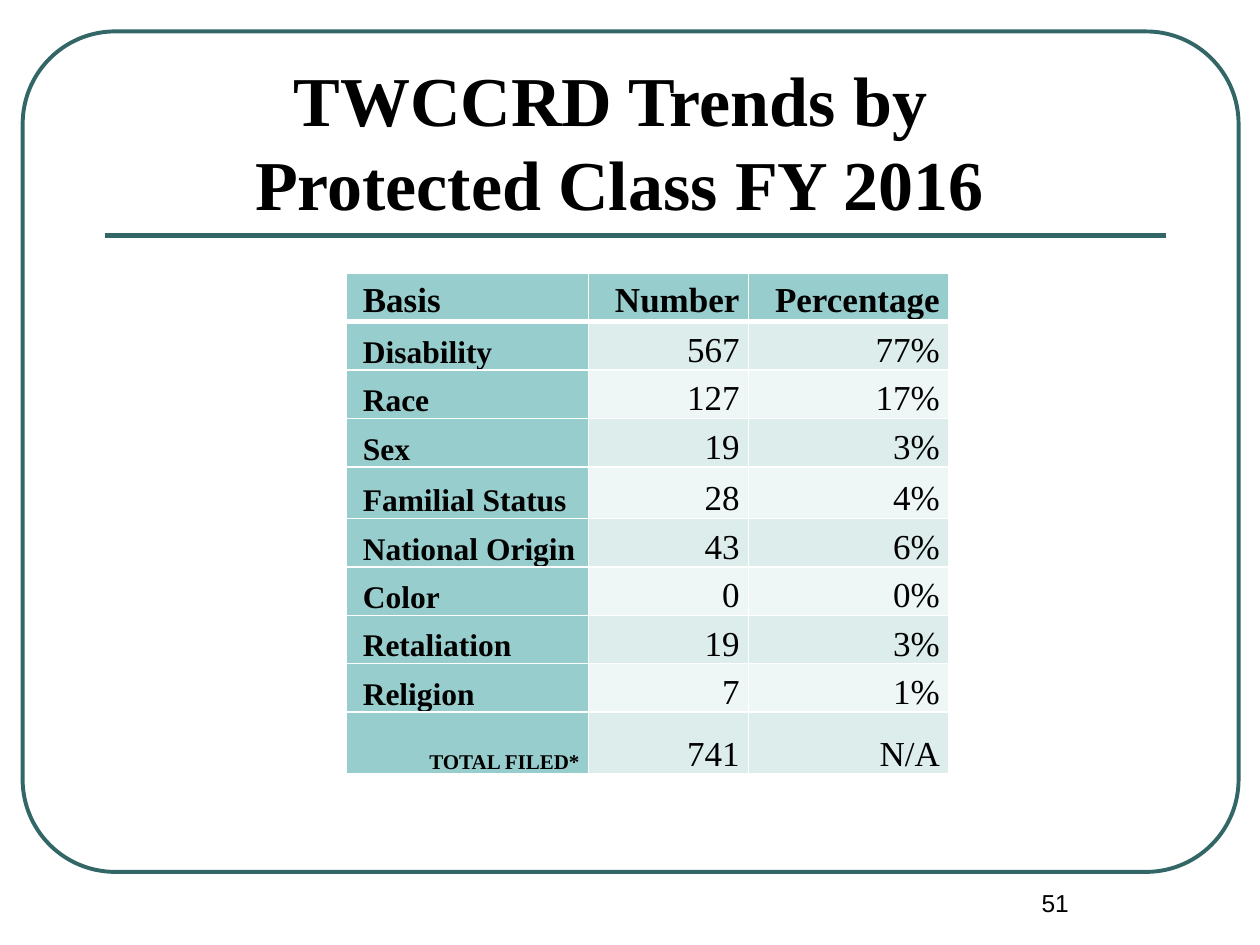
from pptx import Presentation
from pptx.dml.color import RGBColor
from pptx.enum.shapes import MSO_CONNECTOR, MSO_SHAPE
from pptx.enum.text import MSO_ANCHOR, PP_ALIGN
from pptx.oxml.ns import qn
from pptx.util import Inches, Pt
from lxml.etree import SubElement

TITLE = "TWCCRD Trends by \vProtected Class FY 2016"
PAGE = "51"
ROWS = [
    ("Basis", "Number", "Percentage"),
    ("Disability", "567", "77%"),
    ("Race", "127", "17%"),
    ("Sex", "19", "3%"),
    ("Familial Status", "28", "4%"),
    ("National Origin", "43", "6%"),
    ("Color", "0", "0%"),
    ("Retaliation", "19", "3%"),
    ("Religion", "7", "1%"),
    ("TOTAL FILED*", "741", "N/A"),
]
WIDTHS = [1.92, 1.27, 1.59]
HEIGHTS = [0.36] * 4 + [0.41, 0.33, 0.36, 0.36, 0.38, 0.49]
SERIF, SANS = "Times New Roman", "Arial"
GREEN, TEAL, BLACK, WHITE = "336666", "97CDCC", "000000", "FFFFFF"
BANDS = ["EFF6F6", "DDEDEC"]


def color(code):
    return RGBColor.from_string(code)


def style(para, size, bold, align, face=SERIF):
    para.alignment = align
    font = para.font
    font.name, font.size, font.bold = face, Pt(size), bold
    font.color.rgb = color(BLACK)


def label(slide, text, box, size, bold, face, anchor):
    frame = slide.shapes.add_textbox(*map(Inches, box)).text_frame
    frame.word_wrap = True
    frame.vertical_anchor = anchor
    para = frame.paragraphs[0]
    para.text = text
    style(para, size, bold, PP_ALIGN.CENTER, face)


def border(cell, side, width):
    line = SubElement(cell._tc.get_or_add_tcPr(), qn("a:ln" + side), w=str(Pt(width)))
    fill = SubElement(line, qn("a:solidFill"))
    SubElement(fill, qn("a:srgbClr"), val=WHITE)


def fill_cell(cell, text, row, col):
    head, total, side = row == 0, row == len(ROWS) - 1, col == 0
    cell.margin_left = cell.margin_right = Inches(0.07)
    cell.margin_top = cell.margin_bottom = 0
    cell.vertical_anchor = MSO_ANCHOR.MIDDLE if head else MSO_ANCHOR.BOTTOM
    for edge in "LRTB":
        thick = (row, edge) in [(0, "B"), (1, "T")]
        border(cell, edge, 3 if thick else 1)
    cell.fill.solid()
    cell.fill.fore_color.rgb = color(TEAL if head or side else BANDS[row % 2])
    para = cell.text_frame.paragraphs[0]
    para.text = text
    para.line_spacing = 1.15
    para._p.get_or_add_pPr().set("marL", str(Inches(0.06)))
    size = 20 if head or not side else 12 if total else 18
    left = side and not total
    style(para, size, head or side, PP_ALIGN.LEFT if left else PP_ALIGN.RIGHT)


def add_grid(slide):
    box = map(Inches, (2.75, 2.17, sum(WIDTHS), sum(HEIGHTS)))
    table = slide.shapes.add_table(len(ROWS), len(WIDTHS), *box).table
    for col, width in zip(table.columns, WIDTHS):
        col.width = Inches(width)
    for r, (texts, height) in enumerate(zip(ROWS, HEIGHTS)):
        table.rows[r].height = Inches(height)
        for c, text in enumerate(texts):
            fill_cell(table.cell(r, c), text, r, c)


def add_frame(slide):
    box = map(Inches, (0.18, 0.25, 9.65, 6.67))
    frame = slide.shapes.add_shape(MSO_SHAPE.ROUNDED_RECTANGLE, *box)
    frame.adjustments[0] = 0.11
    frame.shadow.inherit = False
    frame.fill.background()
    ends = map(Inches, (0.83, 1.87, 9.25, 1.87))
    rule = slide.shapes.add_connector(MSO_CONNECTOR.STRAIGHT, *ends)
    SubElement(rule._element.spPr, qn("a:effectLst"))
    for shape, width in [(frame, 2.25), (rule, 3)]:
        shape.line.color.rgb = color(GREEN)
        shape.line.width = Pt(width)


def main():
    deck = Presentation()
    deck.slide_width, deck.slide_height = Inches(10), Inches(7.5)
    slide = deck.slides.add_slide(deck.slide_layouts[6])
    add_frame(slide)
    label(slide, TITLE, (0.25, 0.58, 9.33, 1.25), 40, True, SERIF, MSO_ANCHOR.BOTTOM)
    add_grid(slide)
    label(slide, PAGE, (7.5, 7, 1.75, 0.5), 14, False, SANS, MSO_ANCHOR.TOP)
    deck.save("out.pptx")


if __name__ == "__main__":
    main()
